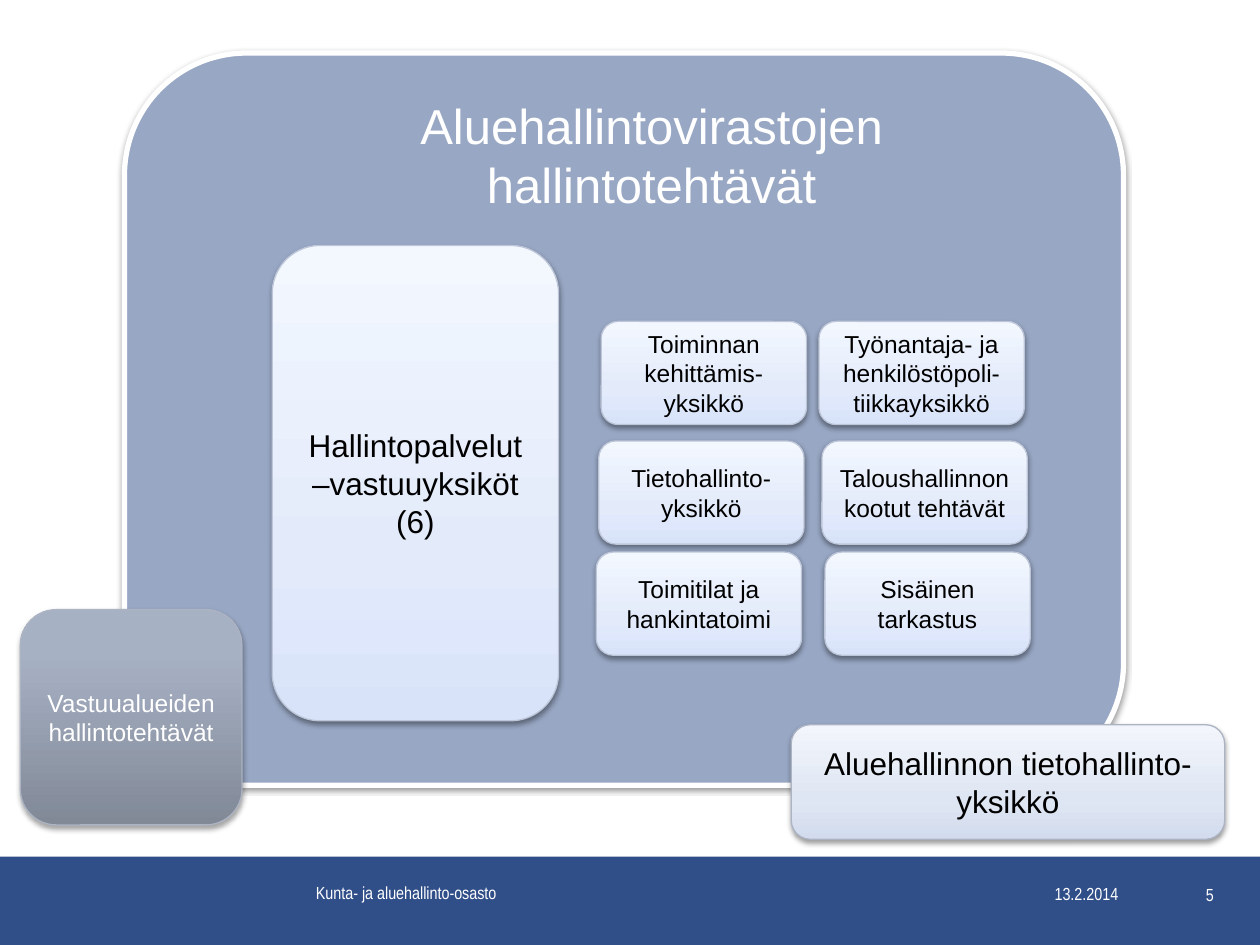
from dataclasses import dataclass
from lxml.etree import SubElement
from pptx import Presentation
from pptx.dml.color import RGBColor
from pptx.enum.shapes import MSO_SHAPE
from pptx.enum.text import MSO_ANCHOR, MSO_AUTO_SIZE, PP_ALIGN
from pptx.oxml.ns import qn
from pptx.util import Cm, Pt


@dataclass(frozen=True)
class Theme:
    font: str = "Arial"
    narrow: str = "Arial Narrow"
    title: int = 28
    large: int = 18
    body: int = 14
    small: int = 10
    white: str = "FFFFFF"
    black: str = "000000"
    band: str = "304E88"
    panel: str = "98A7C4"
    unit_line: str = "BDC6D8"
    side_line: str = "ACB4C3"
    unit_fill: tuple = ((0, "D8E3FA"), (35, "E3EBFB"), (100, "F3F7FE"))
    it_fill: tuple = ((0, "D3DCEE"), (35, "DFE6F3"), (100, "F2F5FB"))
    side_fill: tuple = ((0, "818997"), (80, "A7B1C4"), (100, "A7B2C6"))


T = Theme()


def rgb(value):
    return RGBColor.from_string(value)


def write(tf, text, size=T.body, color=T.black, font=T.font,
          align=PP_ALIGN.CENTER, anchor=MSO_ANCHOR.MIDDLE):
    tf.word_wrap = True
    tf.auto_size = MSO_AUTO_SIZE.NONE
    tf.vertical_anchor = anchor
    for i, line in enumerate(text.split("\n")):
        p = tf.paragraphs[0] if i == 0 else tf.add_paragraph()
        p.alignment = align
        r = p.add_run()
        r.text = line
        r.font.name = font
        r.font.size = Pt(size)
        r.font.color.rgb = rgb(color)


class SlideBuilder:
    def __init__(self, prs):
        self.s = prs.slides.add_slide(prs.slide_layouts[5])

    def title(self, text, box):
        sp = self.s.shapes.title
        sp.left, sp.top, sp.width, sp.height = map(Cm, box)
        write(sp.text_frame, text, size=T.title, color=T.white)
        self.s.shapes._spTree.append(sp._element)

    def label(self, text, box, **fmt):
        sp = self.s.shapes.add_textbox(*map(Cm, box))
        write(sp.text_frame, text, size=T.small, color=T.white,
              font=T.narrow, **fmt)

    def band(self, box):
        sp = self.s.shapes.add_shape(MSO_SHAPE.RECTANGLE, *map(Cm, box))
        sp.shadow.inherit = False
        sp.fill.solid()
        sp.fill.fore_color.rgb = rgb(T.band)
        sp.line.fill.background()

    def card(self, box, fill, line, width=0.75, text=None, opacity=38,
             distance=1.6, **fmt):
        sp = self.s.shapes.add_shape(MSO_SHAPE.ROUNDED_RECTANGLE, *map(Cm, box))
        if isinstance(fill, str):
            sp.fill.solid()
            sp.fill.fore_color.rgb = rgb(fill)
        else:
            self.gradient(sp, fill)
        sp.line.color.rgb = rgb(line)
        sp.line.width = Pt(width)
        self.shadow(sp, opacity, distance)
        if text:
            write(sp.text_frame, text, **fmt)

    def gradient(self, sp, stops):
        sp.fill.gradient()
        sp.fill.gradient_angle = 90
        gs_list = sp._element.spPr.find(".//" + qn("a:gsLst"))
        for gs in list(gs_list):
            gs_list.remove(gs)
        for pos, color in stops:
            gs = SubElement(gs_list, qn("a:gs"), pos=str(pos * 1000))
            SubElement(gs, qn("a:srgbClr"), val=color)

    def shadow(self, sp, opacity, distance):
        sp.shadow.inherit = False
        effects = sp._element.spPr.find(qn("a:effectLst"))
        outer = SubElement(effects, qn("a:outerShdw"), blurRad=str(Pt(3.1)),
                           dist=str(Pt(distance)), dir="5400000",
                           rotWithShape="0")
        color = SubElement(outer, qn("a:srgbClr"), val=T.black)
        SubElement(color, qn("a:alpha"), val=str(opacity * 1000))


def main():
    prs = Presentation()
    prs.slide_width, prs.slide_height = Cm(25.4), Cm(19.05)
    b = SlideBuilder(prs)

    b.band((0, 17.27, 25.4, 1.78))
    b.label("13.2.2014", (21.01, 17.7, 2.36, 0.61), align=PP_ALIGN.LEFT)
    b.label("5", (23.37, 17.7, 1.35, 0.58), align=PP_ALIGN.RIGHT,
            anchor=MSO_ANCHOR.TOP)
    b.label("Kunta- ja aluehallinto-osasto", (6.12, 17.48, 8.05, 1.02),
            align=PP_ALIGN.LEFT)

    b.card((2.51, 1.07, 20.14, 14.76), T.panel, T.white, width=3)
    b.card((5.49, 4.95, 5.77, 9.58), T.unit_fill, T.unit_line,
           text="Hallintopalvelut –vastuuyksiköt\n(6)", size=T.large)

    units = [
        (6.48, "Toiminnan kehittämis-yksikkö",
         "Työnantaja- ja henkilöstöpoli-tiikkayksikkö"),
        (8.89, "Tietohallinto-yksikkö", "Taloushallinnon kootut tehtävät"),
        (11.13, "Toimitilat ja hankintatoimi", "Sisäinen tarkastus"),
    ]
    for i, (top, left_text, right_text) in enumerate(units):
        for left, text in ((12.12 - 0.05 * i, left_text),
                           (16.51 + 0.06 * i, right_text)):
            b.card((left, top, 4.14, 2.08), T.unit_fill, T.unit_line, text=text)

    b.card((15.95, 14.61, 8.74, 2.31), T.it_fill, T.side_line,
           text="Aluehallinnon tietohallinto-yksikkö", size=T.large)
    b.title("Aluehallintovirastojen hallintotehtävät", (5.82, 1.85, 14.63, 2.54))
    b.card((0.41, 12.29, 4.47, 4.34), T.side_fill, T.side_line,
           text="Vastuualueiden\nhallintotehtävät", opacity=35, distance=1.8,
           color=T.white)

    prs.save("out.pptx")


if __name__ == "__main__":
    main()
